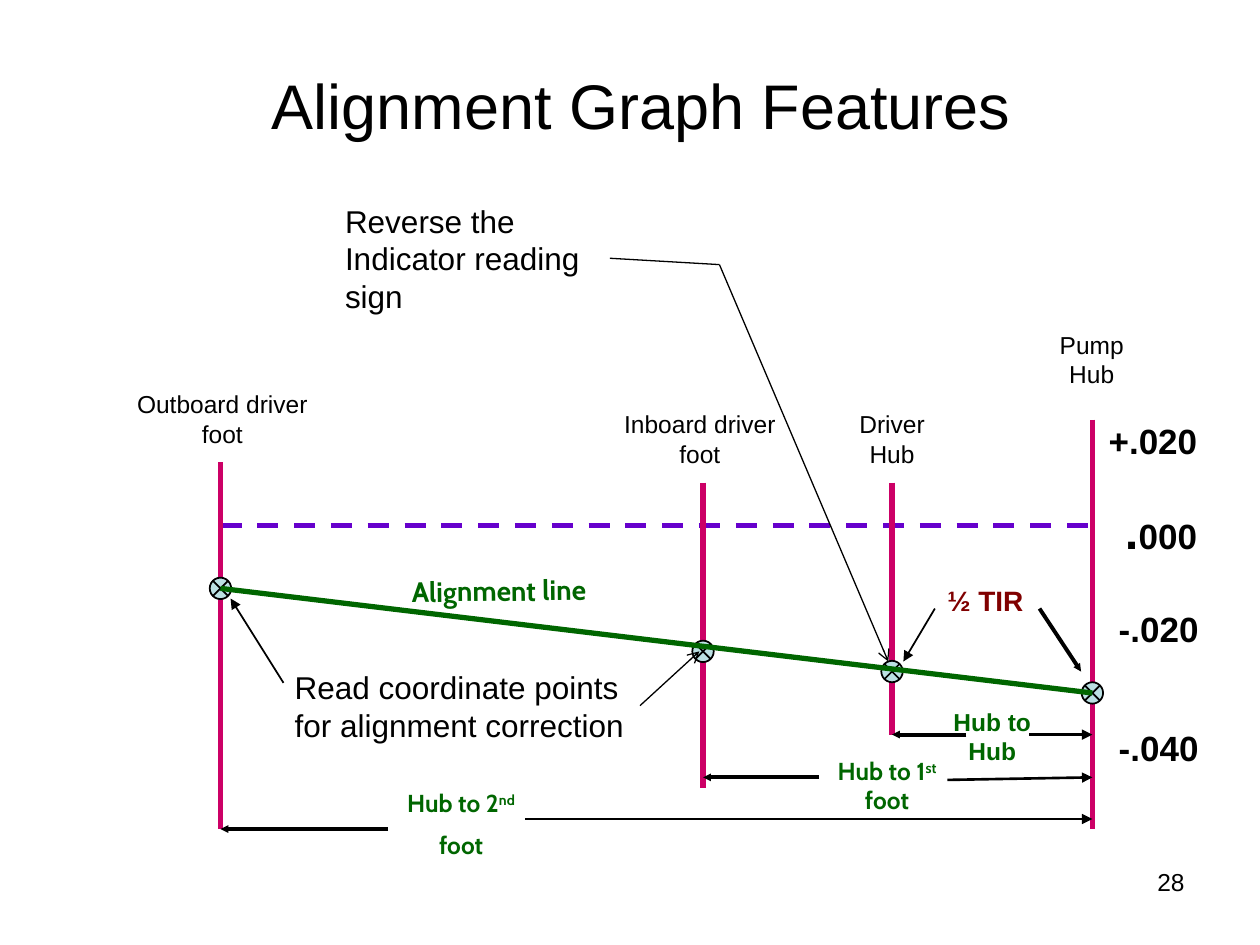
from dataclasses import dataclass

from lxml import etree
from pptx import Presentation
from pptx.dml.color import RGBColor
from pptx.enum.dml import MSO_LINE
from pptx.enum.shapes import MSO_CONNECTOR, MSO_SHAPE
from pptx.enum.text import MSO_ANCHOR, PP_ALIGN
from pptx.oxml.ns import qn
from pptx.util import Inches, Pt

LEFT, CENTER, RIGHT = PP_ALIGN.LEFT, PP_ALIGN.CENTER, PP_ALIGN.RIGHT
TOP, MIDDLE = MSO_ANCHOR.TOP, MSO_ANCHOR.MIDDLE
STRAIGHT = MSO_CONNECTOR.STRAIGHT
JUNCTION = MSO_SHAPE.FLOWCHART_SUMMING_JUNCTION
DASH = MSO_LINE.DASH


@dataclass(frozen=True)
class Theme:
    sans: str = "Arial"
    accent: str = "Cabin"
    black: str = "000000"
    green: str = "006600"
    maroon: str = "800000"
    magenta: str = "CC0066"
    violet: str = "6600CC"
    marker: str = "BBE0E3"
    title: int = 36
    point: int = 28
    scale: int = 20
    note: int = 18
    caption: int = 16
    label: int = 14
    hair: float = 0.75
    thin: float = 1
    medium: float = 1.5
    heavy: float = 2.25
    axis: float = 3


class AlignmentSlide:
    def __init__(self, presentation, theme):
        self.theme = theme
        self.slide = presentation.slides.add_slide(presentation.slide_layouts[6])

    def text(self, box, paragraphs, size, color=None, font=None, bold=False,
             align=LEFT, anchor=TOP, rotation=0):
        holder = self.slide.shapes.add_textbox(*map(Inches, box))
        holder.rotation = rotation
        frame = holder.text_frame
        frame.word_wrap = True
        frame.vertical_anchor = anchor
        for index, pieces in enumerate(paragraphs):
            paragraph = frame.paragraphs[0] if index == 0 else frame.add_paragraph()
            paragraph.alignment = align
            if index:
                paragraph.space_before = Pt(size / 2)
            paragraph.font.size = Pt(size)
            paragraph.font.name = font or self.theme.sans
            paragraph.font.bold = bold
            paragraph.font.color.rgb = RGBColor.from_string(color or self.theme.black)
            for piece in pieces:
                paragraph.add_run().text = piece
        return frame

    def superscript(self, frame):
        run = frame.paragraphs[0].runs[1]
        run._r.get_or_add_rPr().set("baseline", "30000")

    def line(self, start, end, width, color=None, arrow=None, dash=None):
        connector = self.slide.shapes.add_connector(
            STRAIGHT, *map(Inches, (*start, *end)))
        connector.line.width = Pt(width)
        connector.line.color.rgb = RGBColor.from_string(color or self.theme.black)
        if dash:
            connector.line.dash_style = dash
        if arrow:
            tip = etree.SubElement(connector.line._get_or_add_ln(), qn("a:tailEnd"))
            tip.set("type", arrow)
            if width == self.theme.heavy:
                tip.set("w", "sm")
                tip.set("len", "sm")
        etree.SubElement(connector._element.spPr, qn("a:effectLst"))

    def marker(self, x, y, size=0.17):
        junction = self.slide.shapes.add_shape(
            JUNCTION, *map(Inches, (x - size / 2, y - size / 2, size, size)))
        junction.shadow.inherit = False
        junction.fill.solid()
        junction.fill.fore_color.rgb = RGBColor.from_string(self.theme.marker)
        junction.line.color.rgb = RGBColor.from_string(self.theme.black)
        junction.line.width = Pt(self.theme.thin)


def main():
    theme = Theme()
    presentation = Presentation()
    presentation.slide_width, presentation.slide_height = Inches(10), Inches(7.5)
    page = AlignmentSlide(presentation, theme)

    page.text((0.59, 0.36, 9, 0.94), [["Alignment Graph Features"]], theme.title,
              align=CENTER, anchor=MIDDLE)
    page.text((7.17, 6.83, 2.33, 0.52), [["28"]], theme.label, align=RIGHT)

    outboard, inboard, driver, pump = 1.75, 5.58, 7.08, 8.67
    page.line((outboard, 4.17), (pump, 4.17), theme.axis, theme.violet, dash=DASH)
    stations = [
        (pump, 3.33, 6.58, 5.5, "Pump Hub", (8.23, 2.57, 0.87, 0.57)),
        (driver, 3.83, 5.83, 5.33, "Driver Hub", (6.57, 3.2, 1.02, 0.57)),
        (inboard, 3.83, 6.25, 5.17, "Inboard driver foot", (4.69, 3.2, 1.73, 0.57)),
        (outboard, 3.67, 6.58, 4.67, "Outboard driver foot", (0.98, 3.04, 1.57, 0.57)),
    ]
    for x, top, bottom, reading, name, box in stations:
        page.line((x, top), (x, bottom), theme.axis, theme.magenta)
        page.marker(x, reading)
        page.text(box, [[name]], theme.label, align=CENTER)
    page.line((outboard, 4.67), (pump, 5.5), theme.axis, theme.green)

    for reading, box in [("+.020", (8.7, 3.28, 1.08, 0.43)),
                         ("-.020", (8.78, 4.77, 0.92, 0.43)),
                         ("-.040", (8.78, 5.72, 0.92, 0.43))]:
        page.text(box, [[reading]], theme.scale, bold=True)
    zero = page.text((8.83, 3.92, 0.89, 0.57), [[".", "000"]], theme.scale, bold=True)
    zero.paragraphs[0].runs[0].font.size = Pt(theme.point)

    green_label = dict(size=theme.label, color=theme.green, bold=True, align=CENTER)
    page.text((7.44, 5.56, 0.87, 0.57), [["Hub to Hub"]], **green_label)
    first_foot = page.text((6.5, 5.95, 1.08, 0.57), [["Hub to 1", "st", " foot"]],
                           font=theme.accent, **green_label)
    second_foot = page.text((3.03, 6.19, 1.26, 0.69), [["Hub to 2", "nd"], ["foot"]],
                            font=theme.accent, anchor=MIDDLE, **green_label)
    for ordinal in (first_foot, second_foot):
        page.superscript(ordinal)
    page.text((3.17, 4.5, 2, 0.37), [["Alignment line"]], theme.caption, theme.green,
              theme.accent, bold=True, rotation=359.3)
    page.text((7.42, 4.58, 0.83, 0.37), [["½ TIR"]], theme.caption, theme.maroon,
              bold=True)
    page.text((2.64, 1.55, 2.2, 1.01), [["Reverse the Indicator reading sign"]],
              theme.note)
    page.text((2.24, 5.25, 2.84, 0.71),
              [["Read coordinate points for alignment correction"]], theme.note)

    for start, end, width in [
        ((8.17, 5.83), (pump, 5.83), theme.medium),
        ((7.67, 5.83), (driver, 5.83), theme.heavy),
        ((7.52, 6.19), (pump, 6.17), theme.medium),
        ((6.5, 6.17), (inboard, 6.17), theme.heavy),
        ((4.17, 6.5), (pump, 6.5), theme.medium),
        ((3.08, 6.58), (outboard, 6.58), theme.heavy),
        ((8.25, 4.83), (8.58, 5.33), theme.heavy),
        ((7.42, 4.83), (7.17, 5.25), theme.thin),
        ((2.25, 5.42), (1.83, 4.75), theme.thin),
    ]:
        page.line(start, end, width, arrow="triangle")

    elbow = (5.71, 2.1)
    page.line((4.84, 2.05), elbow, theme.hair)
    page.line(elbow, (7.05, 5.25), theme.hair, arrow="arrow")
    page.line((5.08, 5.6), (5.55, 5.17), theme.hair, arrow="arrow")

    presentation.save("out.pptx")


if __name__ == "__main__":
    main()
